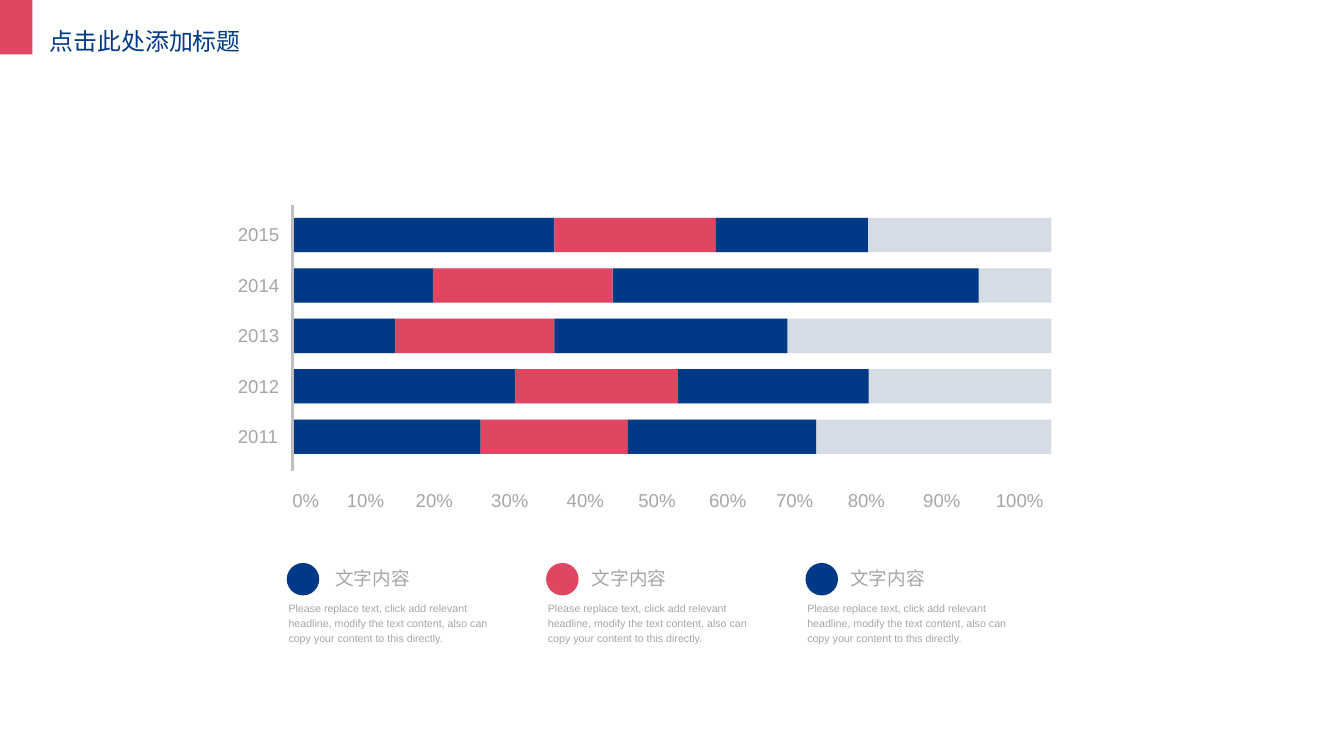
from dataclasses import dataclass

import pptx
import pptx.dml.color
import pptx.enum.shapes
import pptx.enum.text
import pptx.oxml.ns
import pptx.util
from lxml import etree

Inches = pptx.util.Inches
SHAPE = pptx.enum.shapes.MSO_SHAPE
ANCHOR = pptx.enum.text.MSO_ANCHOR
AUTO_SIZE = pptx.enum.text.MSO_AUTO_SIZE


@dataclass(frozen=True)
class Theme:
    navy: str = "003A87"
    red: str = "E04661"
    track: str = "D6DCE5"
    axis: str = "BFBFBF"
    text: str = "A6A6A6"
    font: str = "Arial"
    cjk_font: str = "Noto Sans CJK SC"
    title_size: int = 18
    label_size: int = 14
    note_size: int = 8
    axis_width: int = 2
    line_spacing: float = 1.2


THEME = Theme()

BAR_COLORS = (THEME.navy, THEME.red, THEME.navy)
YEARS = {
    "2015": (34.5, 21.3, 20.0),
    "2014": (18.5, 23.7, 48.2),
    "2013": (13.5, 21.0, 30.7),
    "2012": (29.3, 21.5, 25.1),
    "2011": (24.8, 19.4, 24.8),
}
TICK_OFFSETS = (0, 0.57, 1.29, 2.08, 2.87, 3.62, 4.36, 5.06, 5.81, 6.6, 7.36)
NOTE = (
    "Please replace text, click add relevant headline, modify the text content, "
    "also can copy your content to this directly."
)
LEGEND = (
    (THEME.navy, "文字内容", 0.41),
    (THEME.red, "文字内容", 0.38),
    (THEME.navy, "文字内容", 0.37),
)


def rgb(color):
    return pptx.dml.color.RGBColor.from_string(color)


def add_block(shapes, kind, left, top, width, height, color):
    sp = shapes.add_shape(kind, Inches(left), Inches(top), Inches(width), Inches(height))
    sp.shadow.inherit = False
    sp.fill.solid()
    sp.fill.fore_color.rgb = rgb(color)
    sp.line.fill.background()
    return sp


def add_text(shapes, text, left, top, width, height, size, wrap=False):
    sp = shapes.add_textbox(Inches(left), Inches(top), Inches(width), Inches(height))
    tf = sp.text_frame
    tf.word_wrap = wrap
    tf.auto_size = AUTO_SIZE.SHAPE_TO_FIT_TEXT
    p = tf.paragraphs[0]
    p.line_spacing = THEME.line_spacing
    r = p.add_run()
    r.text = text
    p.font.size = pptx.util.Pt(size)
    p.font.name = THEME.font
    p.font.color.rgb = rgb(THEME.text)
    return sp


def set_cjk_font(sp):
    for p in sp.text_frame.paragraphs:
        for r in p.runs:
            ea = etree.SubElement(r.font._element, pptx.oxml.ns.qn("a:ea"))
            ea.set("typeface", THEME.cjk_font)


def add_header(s, left, top, width, height):
    add_block(s.shapes, SHAPE.RECTANGLE, left, top, 0.34, height, THEME.red)
    sp = add_text(s.shapes, "点击此处添加标题", left + 0.42, top + 0.23,
                  width - 0.42, 0.39, THEME.title_size, wrap=True)
    tf = sp.text_frame
    tf.auto_size = AUTO_SIZE.NONE
    tf.vertical_anchor = ANCHOR.MIDDLE
    p = tf.paragraphs[0]
    p.line_spacing = 1.0
    p.font.name = THEME.cjk_font
    p.font.color.rgb = rgb(THEME.navy)
    set_cjk_font(sp)


def add_axis(shapes, left, top, height):
    line = shapes.add_connector(pptx.enum.shapes.MSO_CONNECTOR.STRAIGHT,
                                Inches(left), Inches(top), Inches(left), Inches(top + height))
    line.line.color.rgb = rgb(THEME.axis)
    line.line.width = pptx.util.Pt(THEME.axis_width)
    etree.SubElement(line._element.spPr, pptx.oxml.ns.qn("a:effectLst"))


def add_bar_chart(s, left, top, width, height):
    shapes = s.shapes.add_group_shape().shapes
    bar_height = 0.36
    pitch = (height - 0.32 - bar_height) / (len(YEARS) - 1)
    for row, (year, shares) in enumerate(YEARS.items()):
        bar_top = top + 0.14 + row * pitch
        add_block(shapes, SHAPE.RECTANGLE, left, bar_top, width, bar_height, THEME.track)
        bar_left = left
        for share, color in zip(shares, BAR_COLORS):
            bar_width = width * share / 100
            add_block(shapes, SHAPE.RECTANGLE, bar_left, bar_top, bar_width, bar_height, color)
            bar_left += bar_width
        add_text(shapes, year, left - 0.67, bar_top - 0.04, 0.64, 0.36, THEME.label_size)
    add_axis(shapes, left, top, height)
    for i, offset in enumerate(TICK_OFFSETS):
        label = f"{i * 10}%"
        add_text(shapes, label, left - 0.1 + offset, top + height + 0.09,
                 0.28 + 0.105 * len(label), 0.36, THEME.label_size)


def add_legend(s, left, top, width):
    pitch = width / len(LEGEND)
    for i, (color, heading, indent) in enumerate(LEGEND):
        x = left + i * pitch
        add_block(s.shapes, SHAPE.OVAL, x, top + 0.05, 0.34, 0.34, color)
        sp = add_text(s.shapes, heading, x + indent, top, 0.99, 0.36, THEME.label_size)
        set_cjk_font(sp)
        add_text(s.shapes, NOTE, x - 0.08, top + 0.38, 2.46, 0.59, THEME.note_size, wrap=True)


def main():
    prs = pptx.Presentation()
    prs.slide_width = Inches(14.06)
    prs.slide_height = Inches(7.91)
    s = prs.slides.add_slide(prs.slide_layouts[6])
    add_header(s, 0, 0, 2.78, 0.57)
    add_bar_chart(s, 3.06, 2.14, 7.94, 2.79)
    add_legend(s, 3, 5.84, 8.14)
    prs.save("out.pptx")


if __name__ == "__main__":
    main()
